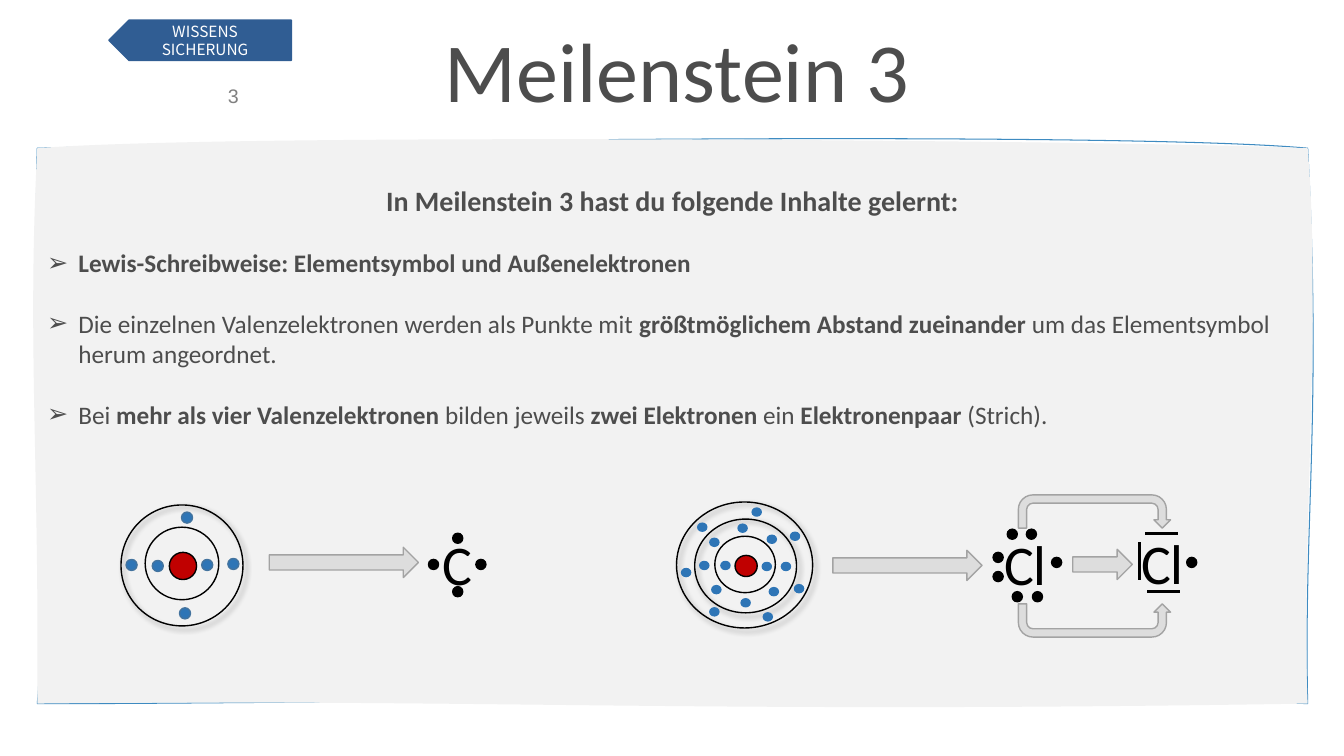
import pptx
import pptx.util
import pptx.dml.color
import pptx.enum.shapes
import pptx.enum.text
import pptx.oxml.ns
from lxml import etree

COLORS = {
    "ink": "4D4D4D", "black": "000000", "white": "FFFFFF", "grey": "808080",
    "banner": "305D93", "panel": "F2F2F2", "panel_edge": "3E8BC1",
    "arrow": "DDDDDD", "arrow_edge": "A3A3A3",
    "nucleus": "C00000", "electron": "2E75B6", "electron_edge": "43739E",
}
COLUMNS, ROWS = 133.3, 75
SHAPE = pptx.enum.shapes.MSO_SHAPE
ALIGN = pptx.enum.text.PP_ALIGN
ANCHOR = pptx.enum.text.MSO_ANCHOR
QN = pptx.oxml.ns.qn


def color(name):
    return pptx.dml.color.RGBColor.from_string(COLORS[name])


def write_text(para, text, size=18, tint="ink", font="Calibri", bold=False):
    span = para.add_run()
    span.text = text
    span.font.size = pptx.util.Pt(size)
    span.font.name = font
    span.font.bold = bold
    span.font.color.rgb = color(tint)


class Page:
    """A slide on a grid whose cells are a tenth of an inch."""

    def __init__(self, deck):
        self.slide = deck.slides.add_slide(deck.slide_layouts[6])
        self.shapes = self.slide.shapes
        self.column = deck.slide_width / COLUMNS
        self.row = deck.slide_height / ROWS

    def place(self, left, top, width, height):
        return (round(left * self.column), round(top * self.row),
                round(width * self.column), round(height * self.row))

    def group(self):
        """Send the next shapes to a new group."""
        self.shapes = self.slide.shapes.add_group_shape().shapes

    def ungroup(self):
        self.shapes = self.slide.shapes

    def style(self, shape, fill=None, line="black", weight=1):
        if fill:
            shape.fill.solid()
            shape.fill.fore_color.rgb = color(fill)
        else:
            shape.fill.background()
        shape.line.color.rgb = color(line)
        shape.line.width = pptx.util.Pt(weight)
        shape.shadow.inherit = False
        return shape

    def shape(self, kind, area, fill=None, line="black", adjust=()):
        shape = self.shapes.add_shape(kind, *self.place(*area))
        for index, value in enumerate(adjust):
            shape.adjustments[index] = value
        return self.style(shape, fill, line)

    def flip(self, shape):
        shape.element.spPr.find(QN("a:xfrm")).set("flipH", "1")

    def shell(self, area, shadow=False):
        shell = self.shape(SHAPE.OVAL, area)
        if shadow:
            effects = shell.element.spPr.find(QN("a:effectLst"))
            outer = etree.SubElement(effects, QN("a:outerShdw"), blurRad="50800", dist="38100",
                                     dir="2700000", algn="tl", rotWithShape="0")
            tone = etree.SubElement(outer, QN("a:srgbClr"), val=COLORS["black"])
            etree.SubElement(tone, QN("a:alpha"), val="40000")

    def dots(self, corners, width=1, height=1, fill="black", line="black"):
        for left, top in corners:
            self.shape(SHAPE.OVAL, (left, top, width, height), fill, line)

    def arrow(self, *area):
        self.shape(SHAPE.RIGHT_ARROW, area, "arrow", "arrow_edge", (0.5, 0.5))

    def turn_arrow(self, *area):
        return self.shape(SHAPE.U_TURN_ARROW, area, "arrow", "arrow_edge",
                          (0.25, 0.25, 0.25, 0.438, 1))

    def text(self, area, text, wrap=True, align=ALIGN.LEFT, inset=1, **style):
        box = self.shapes.add_textbox(*self.place(*area))
        frame = box.text_frame
        frame.word_wrap = wrap
        frame.margin_left = round(inset * self.column)
        frame.paragraphs[0].alignment = align
        write_text(frame.paragraphs[0], text, **style)

    def stroke(self, *ends):
        x1, y1, x2, y2 = self.place(*ends)
        line = self.shapes.add_connector(pptx.enum.shapes.MSO_CONNECTOR.STRAIGHT, x1, y1, x2, y2)
        line.line.color.rgb = color("black")
        line.line.width = pptx.util.Pt(2.25)
        etree.SubElement(line.element.spPr, QN("a:effectLst"))

    def curved_panel(self, corners, edge_controls, fill_controls, fill, line):
        """A freeform whose edge and fill follow different curves between the same corners."""
        points = [(round(x * self.column), round(y * self.row)) for x, y in corners]
        builder = self.shapes.build_freeform(*points[0], scale=1.0)
        builder.add_line_segments(points[1:], close=True)
        panel = self.style(builder.convert_to_shape(), fill, line, 0.75)
        outlines = panel.element.spPr.find(QN("a:custGeom")).find(QN("a:pathLst"))
        outlines.remove(outlines[0])

        def add_point(parent, point):
            etree.SubElement(parent, QN("a:pt"),
                             x=str(round(point[0] * self.column) - panel.left),
                             y=str(round(point[1] * self.row) - panel.top))

        for controls, paint in ((edge_controls, {"fill": "none"}), (fill_controls, {"stroke": "0"})):
            outline = etree.SubElement(outlines, QN("a:path"), w=str(panel.width),
                                       h=str(panel.height), **paint)
            add_point(etree.SubElement(outline, QN("a:moveTo")), corners[0])
            for pair, end in zip(controls, corners[1:] + corners[:1]):
                curve = etree.SubElement(outline, QN("a:cubicBezTo"))
                for point in (*pair, end):
                    add_point(curve, point)
            etree.SubElement(outline, QN("a:close"))
        return panel

    def bullet(self, para):
        para.space_before = pptx.util.Pt(21.7)
        properties = para._p.get_or_add_pPr()
        indent = round(3.1 * self.column)
        properties.set("marL", str(indent))
        properties.set("indent", str(-indent))
        etree.SubElement(properties, QN("a:buFont"), typeface="Arial")
        etree.SubElement(properties, QN("a:buChar"), char="➢")


def draw_header(page):
    page.text((20.6, 7.85, 6.6, 3.4), "3", inset=2, size=14, tint="grey", font="Arial")
    banner = page.shape(SHAPE.PENTAGON, (10.8, 2, 18.1, 4), "banner", "banner")
    page.flip(banner)
    frame = banner.text_frame
    frame.vertical_anchor = ANCHOR.MIDDLE
    for index, word in enumerate(("WISSENS", "SICHERUNG")):
        para = frame.add_paragraph() if index else frame.paragraphs[0]
        para.alignment = ALIGN.CENTER
        para.line_spacing = pptx.util.Pt(13)
        write_text(para, word, size=11, tint="white", font="Noto Sans CJK TC")


def draw_panel(page):
    panel = page.curved_panel(
        [(3.7, 14.7), (129.7, 14.7), (129.7, 69.8), (3.7, 69.8)],
        [((45.7, 13.7), (113.4, 13.2)), ((131.1, 41.3), (129.3, 51.3)),
         ((83.4, 68.8), (20.8, 69.9)), ((4.6, 60.2), (3.3, 25.7))],
        [((24.7, 13.1), (114.4, 14)), ((131.1, 31), (129, 56.3)),
         ((67.8, 70.8), (48.8, 69.3)), ((3.9, 45.4), (2.7, 34.1))],
        "panel", "panel_edge")
    frame = panel.text_frame
    frame.word_wrap = True
    frame.vertical_anchor = ANCHOR.TOP
    frame.margin_top = round(3.5 * page.row)
    heading = frame.paragraphs[0]
    heading.alignment = ALIGN.CENTER
    write_text(heading, "In Meilenstein 3 hast du folgende Inhalte gelernt:", size=20, bold=True)
    lessons = [
        [("Lewis-Schreibweise: Elementsymbol und Außenelektronen", True)],
        [("Die einzelnen Valenzelektronen werden als Punkte mit ", False),
         ("größtmöglichem Abstand zueinander ", True),
         ("um das Elementsymbol herum angeordnet.", False)],
        [("Bei ", False), ("mehr als vier Valenzelektronen", True), (" bilden jeweils ", False),
         ("zwei Elektronen ", True), ("ein ", False), ("Elektronenpaar", True),
         (" (Strich).", False)],
    ]
    for lesson in lessons:
        para = frame.add_paragraph()
        para.alignment = ALIGN.LEFT
        page.bullet(para)
        for words, bold in lesson:
            write_text(para, words, bold=bold)
    page.text((42.8, 1.3, 48.7, 11.1), "Meilenstein 3", wrap=False, align=ALIGN.CENTER, size=60)


def draw_carbon(page):
    page.group()
    page.arrow(26.7, 54.3, 14.8, 3)
    page.text((42.9, 52, 11, 7.7), "C", size=40, tint="black")
    page.dots([(42.5, 55.5), (44.9, 52.9), (44.9, 58.2), (47.2, 55.5)])
    page.shell((12, 50.1, 12.1, 12), shadow=True)
    page.shell((14.4, 52.3, 7.3, 7.2))
    page.dots([(16.8, 54.8)], 2.7, 2.7, "nucleus")
    page.dots([(15.1, 55.6), (20, 55.5), (12.5, 55.5), (17.8, 60.3), (22.6, 55.4), (18, 50.8)],
              1.1, 1.1, "electron", "electron_edge")
    page.ungroup()


def draw_chlorine(page):
    page.group()
    page.shell((68.9, 51.5, 10.1, 9.3), shadow=True)
    page.shell((70.9, 53.2, 6, 5.6))
    page.shell((67.1, 49.8, 13.5, 12.5), shadow=True)
    page.dots([(72.9, 55.1)], 2.2, 2.1, "nucleus")
    inner = [(71.5, 55.7), (75.6, 55.8)]
    middle = [(69.4, 55.7), (77.5, 55.8), (70.4, 53.4), (73.2, 52),
              (70.6, 58.1), (76.1, 53.1), (73.5, 59.4), (76.3, 58.3)]
    outer = [(69.2, 51.9), (67.6, 56.4), (74.6, 50.4), (70.4, 60.3),
             (75.7, 60.8), (78.4, 52.8), (78.8, 58)]
    page.dots(inner + middle + outer, 0.9, 0.8, "electron", "electron")
    page.ungroup()
    page.arrow(82.6, 54.6, 14.8, 3)
    page.text((112.2, 51.9, 11, 7.7), "Cl", size=40, tint="black")
    page.stroke(113, 53.8, 113, 57.5)
    page.dots([(117.7, 55.3)])
    page.text((98.6, 52, 6.7, 7.7), "Cl", size=40, tint="black")
    page.group()
    page.dots([(98.5, 56.7), (98.5, 54.8), (104.3, 55.3), (101.8, 52.5),
               (99.9, 52.5), (100.4, 58.7), (102.4, 58.7)])
    page.ungroup()
    page.turn_arrow(101, 49.1, 15.1, 3.3)
    lower = page.turn_arrow(101, 59.9, 15.1, 3.3)
    lower.rotation = 180
    page.flip(lower)
    page.stroke(117, 58.65, 113.8, 58.65)
    page.stroke(116.8, 52.95, 113.6, 52.95)
    page.arrow(106.4, 54.5, 5.9, 3)


def main():
    deck = pptx.Presentation()
    deck.slide_width = pptx.util.Inches(13.33)
    deck.slide_height = pptx.util.Inches(7.5)
    page = Page(deck)
    draw_header(page)
    draw_panel(page)
    draw_carbon(page)
    draw_chlorine(page)
    deck.save("out.pptx")


if __name__ == "__main__":
    main()
